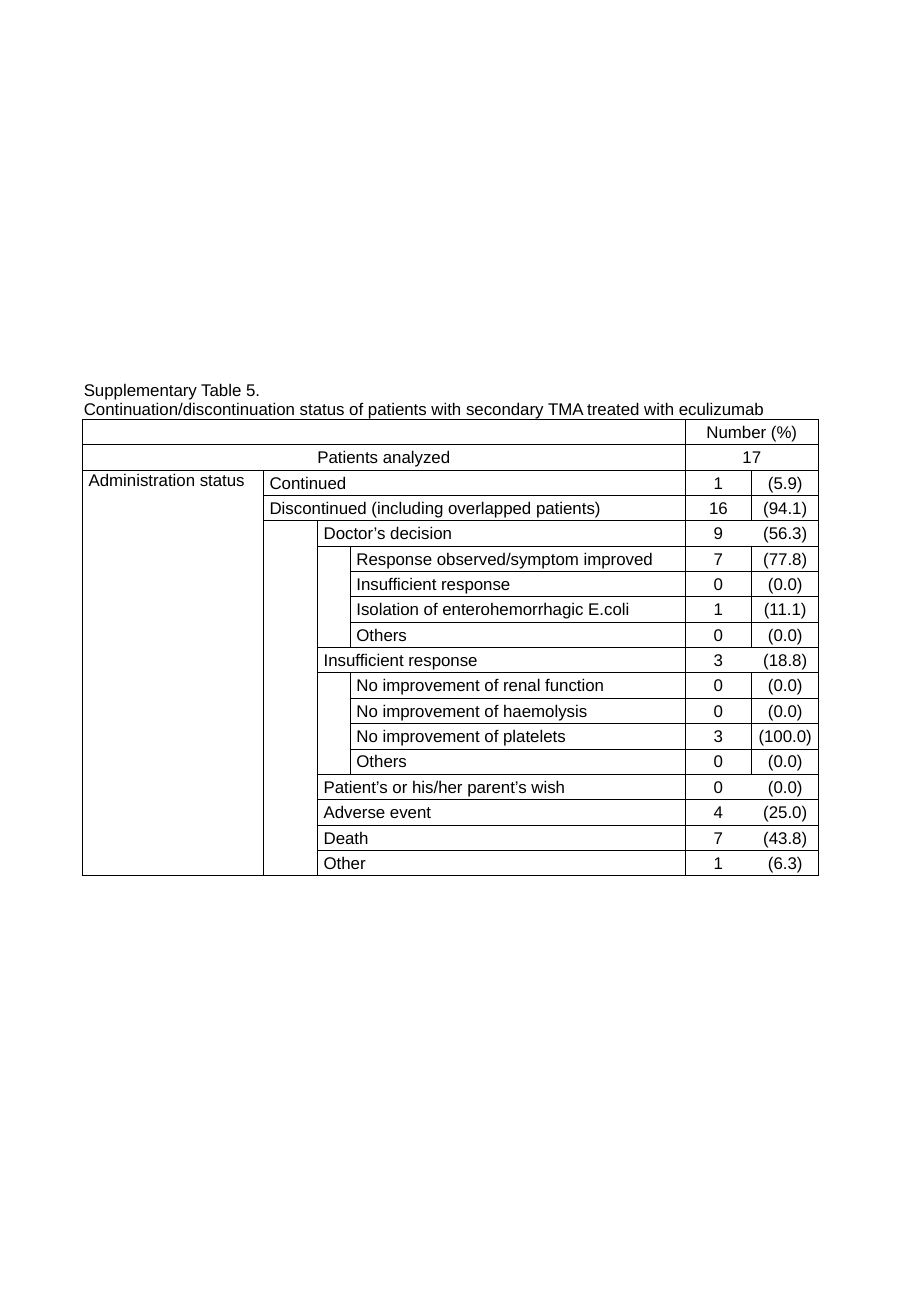
from itertools import groupby
from lxml.etree import SubElement
from pptx import Presentation
from pptx.dml.color import RGBColor
from pptx.enum.text import MSO_ANCHOR, PP_ALIGN
from pptx.oxml.ns import qn
from pptx.util import Inches, Pt

PAGE_COLUMNS, PAGE_ROWS = 750, 1083
GRID_STEP = Inches(0.01)
NO_STYLE = "{2D5ABB26-0587-4C30-8999-92F81FD0307C}"

CAPTION = ["Supplementary Table 5.",
           "Continuation/discontinuation status of patients with "
           "secondary TMA treated with eculizumab"]
# Nesting level, reason, number of patients, percentage
STATUSES = [
    (1, "Continued", "1", "5.9"),
    (1, "Discontinued (including overlapped patients)", "16", "94.1"),
    (2, "Doctor’s decision", "9", "56.3"),
    (3, "Response observed/symptom improved", "7", "77.8"),
    (3, "Insufficient response", "0", "0.0"),
    (3, "Isolation of enterohemorrhagic E.coli", "1", "11.1"),
    (3, "Others", "0", "0.0"),
    (2, "Insufficient response", "3", "18.8"),
    (3, "No improvement of renal function", "0", "0.0"),
    (3, "No improvement of haemolysis", "0", "0.0"),
    (3, "No improvement of platelets", "3", "100.0"),
    (3, "Others", "0", "0.0"),
    (2, "Patient’s or his/her parent’s wish", "0", "0.0"),
    (2, "Adverse event", "4", "25.0"),
    (2, "Death", "7", "43.8"),
    (2, "Other", "1", "6.3"),
]
FIRST_STATUS = 3
LAST_ROW = FIRST_STATUS + len(STATUSES) - 1
REASON, NUMBER, PERCENT = 3, 4, 5
COLUMN_WIDTHS = [149, 44.5, 27, 275.5, 55, 55]
CAPTION_HEIGHT, BODY_HEIGHT = 32, 376
ROW_HEIGHTS = [CAPTION_HEIGHT] + [BODY_HEIGHT / LAST_ROW] * LAST_ROW


def color(hex_value):
    return RGBColor.from_string(hex_value)


def grid(steps):
    return round(steps * GRID_STEP)


class StatusSheet:
    font_format = {"name": "Arial", "size": Pt(10)}
    cell_format = {"margin_left": grid(1), "margin_right": grid(1),
                   "margin_top": grid(1), "margin_bottom": 0,
                   "vertical_anchor": MSO_ANCHOR.MIDDLE}
    ink = "000000"
    rule_width = Pt(0.5)

    def __init__(self, presentation):
        presentation.slide_width = grid(PAGE_COLUMNS)
        presentation.slide_height = grid(PAGE_ROWS)
        self.slide = presentation.slides.add_slide(presentation.slide_layouts[6])

    def table(self, left, top, widths, heights):
        frame = self.slide.shapes.add_table(
            len(heights), len(widths), grid(left), grid(top),
            grid(sum(widths)), grid(sum(heights)))
        self.grid_table = frame.table
        self.grid_table.first_row = self.grid_table.horz_banding = False
        frame._element.find(".//" + qn("a:tableStyleId")).text = NO_STYLE
        for column, width in zip(self.grid_table.columns, widths):
            column.width = grid(width)
        for row, height in zip(self.grid_table.rows, heights):
            row.height = grid(height)
        for cell in self.grid_table.iter_cells():
            cell.fill.background()
            for attribute, value in self.cell_format.items():
                setattr(cell, attribute, value)
            paragraph = cell.text_frame.paragraphs[0]._p
            SubElement(paragraph, qn("a:endParaRPr"), sz="1000")

    def region(self, first, last, lines=(), centered=False, sides="LRTB"):
        """Join the cells from first to last, outline the region and fill in its text."""
        origin = self.grid_table.cell(*first)
        if first != last:
            origin.merge(self.grid_table.cell(*last))
        for row in range(first[0], last[0] + 1):
            for column in range(first[1], last[1] + 1):
                at_edge = {"L": column == first[1], "R": column == last[1],
                           "T": row == first[0], "B": row == last[0]}
                drawn = [side for side in sides
                         if at_edge[side] or (row, column) == first]
                self.border(self.grid_table.cell(row, column), drawn)
        for index, line in enumerate(lines):
            self.text_line(origin, index, line, centered)
        return origin

    def border(self, cell, sides):
        properties = cell._tc.get_or_add_tcPr()
        for position, side in enumerate(sides):
            rule = SubElement(properties, qn("a:ln" + side), w=str(self.rule_width))
            fill = SubElement(rule, qn("a:solidFill"))
            SubElement(fill, qn("a:srgbClr"), val=self.ink)
            properties.insert(position, rule)

    def text_line(self, cell, index, line, centered):
        frame = cell.text_frame
        paragraph = frame.add_paragraph() if index else frame.paragraphs[0]
        paragraph.alignment = PP_ALIGN.CENTER if centered else PP_ALIGN.LEFT
        run = paragraph.add_run()
        run.text = line
        for attribute, value in self.font_format.items():
            setattr(run.font, attribute, value)
        run.font.color.rgb = color(self.ink)

    def label(self, first, last, text):
        """Add a region whose text is set in a little from its left side."""
        cell = self.region(first, last, [text])
        properties = cell.text_frame.paragraphs[0]._p.get_or_add_pPr()
        properties.set("marL", str(grid(4)))
        properties.set("indent", "0")
        return cell


def main():
    presentation = Presentation()
    sheet = StatusSheet(presentation)
    sheet.table(68, 313, COLUMN_WIDTHS, ROW_HEIGHTS)

    sheet.region((0, 0), (0, PERCENT), CAPTION, sides="B")
    headings = [([], ["Number (%)"]), (["Patients analyzed"], ["17"])]
    for row, (heading, total) in enumerate(headings, start=1):
        sheet.region((row, 0), (row, REASON), heading, centered=True)
        sheet.region((row, NUMBER), (row, PERCENT), total, centered=True)

    status = sheet.label((FIRST_STATUS, 0), (LAST_ROW, 0), "Administration status")
    status.vertical_anchor = MSO_ANCHOR.TOP
    for row, (level, reason, number, percent) in enumerate(STATUSES, FIRST_STATUS):
        sheet.label((row, level), (row, REASON), reason)
        sheet.region((row, NUMBER), (row, NUMBER), [number], True, "LTB")
        sheet.region((row, PERCENT), (row, PERCENT), [f"({percent})"], True, "RTB")

    # An empty cell runs down the left of each group of deeper reasons
    for parent in (1, 2):
        rows = enumerate(STATUSES, FIRST_STATUS)
        for nested, group in groupby(rows, lambda entry: entry[1][0] > parent):
            if nested:
                members = [row for row, _ in group]
                sheet.region((members[0], parent), (members[-1], parent))

    presentation.save("out.pptx")


if __name__ == "__main__":
    main()
